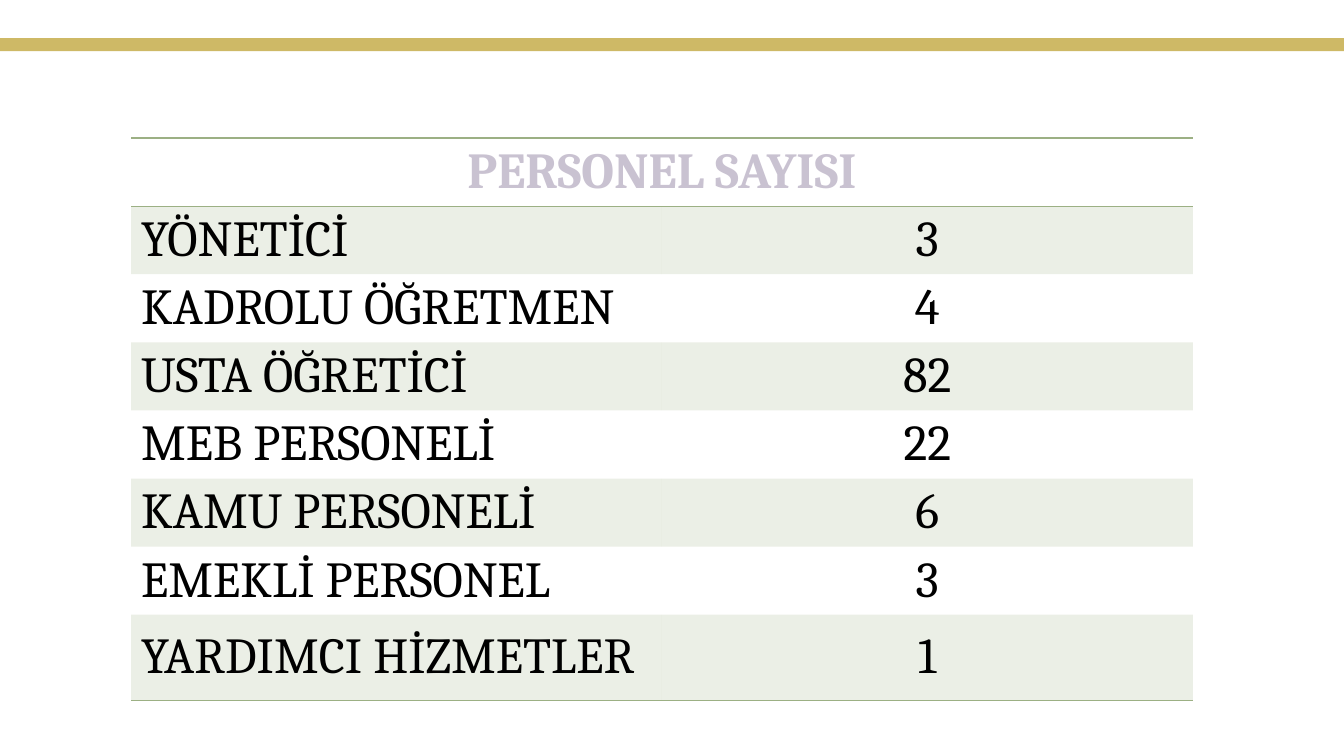
from dataclasses import dataclass

from lxml import etree
from pptx import Presentation
from pptx.dml.color import RGBColor
from pptx.enum import shapes, text
from pptx.oxml import ns
from pptx.util import Pt


@dataclass(frozen=True)
class Theme:
    font: str = "Cambria"
    size: int = 36
    gold: str = "CEB966"
    green: str = "9CB084"
    lilac: str = "C9C2D1"
    ink: str = "000000"
    tint: int = 20  # opacity of the bands, percent


THEME = Theme()
PLAIN = "{2D5ABB26-0587-4C30-8999-92F81FD0307C}"  # no style, no grid

HEAD = "PERSONEL SAYISI"
STAFF = [
    ("YÖNETİCİ", 3),
    ("KADROLU ÖĞRETMEN", 4),
    ("USTA ÖĞRETİCİ", 82),
    ("MEB PERSONELİ", 22),
    ("KAMU PERSONELİ", 6),
    ("EMEKLİ PERSONEL", 3),
    ("YARDIMCI HİZMETLER", 1),
]


def add_bar(slide, left, top, width, height):
    bar = slide.shapes.add_shape(
        shapes.MSO_SHAPE.RECTANGLE, Pt(left), Pt(top), Pt(width), Pt(height))
    bar.shadow.inherit = False
    bar.fill.solid()
    bar.fill.fore_color.rgb = RGBColor.from_string(THEME.gold)
    bar.line.fill.background()


def write(cell, words, color, center=False, bold=False):
    cell.vertical_anchor = text.MSO_ANCHOR.MIDDLE
    para = cell.text_frame.paragraphs[0]
    para.alignment = text.PP_ALIGN.CENTER if center else text.PP_ALIGN.LEFT
    run = para.add_run()
    run.text = words
    run.font.name = THEME.font
    run.font.size = Pt(THEME.size)
    run.font.bold = bold
    run.font.color.rgb = RGBColor.from_string(color)


def rule(cell, *sides):
    """Draw thin lines on the given sides, T before B."""
    props = cell._tc.get_or_add_tcPr()
    for side in sides:
        line = etree.SubElement(props, ns.qn(f"a:ln{side}"), w=str(Pt(1)))
        fill = etree.SubElement(line, ns.qn("a:solidFill"))
        etree.SubElement(fill, ns.qn("a:srgbClr"), val=THEME.green)


def shade(cell, band):
    if not band:
        cell.fill.background()
        return
    cell.fill.solid()
    cell.fill.fore_color.rgb = RGBColor.from_string(THEME.green)
    color = cell._tc.tcPr.find(".//" + ns.qn("a:solidFill") + "[last()]")
    color = cell._tc.tcPr.find(ns.qn("a:solidFill")).find(ns.qn("a:srgbClr"))
    etree.SubElement(color, ns.qn("a:alpha"), val=str(THEME.tint * 1000))


def add_staff(slide, left, top, width, row, last):
    count = len(STAFF) + 1
    frame = slide.shapes.add_table(
        count, 2, Pt(left), Pt(top), Pt(width), Pt(row * (count - 1) + last))
    table = frame.table
    table.horz_banding = False
    table._tbl.tblPr.find(ns.qn("a:tableStyleId")).text = PLAIN
    for line in table.rows:
        line.height = Pt(row)
    table.rows[count - 1].height = Pt(last)

    # Header across both columns
    table.cell(0, 0).merge(table.cell(0, 1))
    write(table.cell(0, 0), HEAD, THEME.lilac, center=True, bold=True)
    for cell in table.rows[0].cells:
        rule(cell, "T", "B")
        shade(cell, False)

    # One row per staff group, every other one tinted
    for num, (group, total) in enumerate(STAFF, 1):
        name, sum_cell = table.rows[num].cells
        write(name, group, THEME.ink)
        write(sum_cell, str(total), THEME.ink, center=True)
        for cell in (name, sum_cell):
            if num == len(STAFF):
                rule(cell, "B")
            shade(cell, num % 2 == 1)


def main():
    deck = Presentation()
    deck.slide_width, deck.slide_height = Pt(960), Pt(540)
    slide = deck.slides.add_slide(deck.slide_layouts[6])
    add_bar(slide, 0, 27.2, 960, 9.3)
    add_staff(slide, 93.6, 98.6, 758.4, row=48.6, last=61.2)
    deck.save("out.pptx")


if __name__ == "__main__":
    main()
